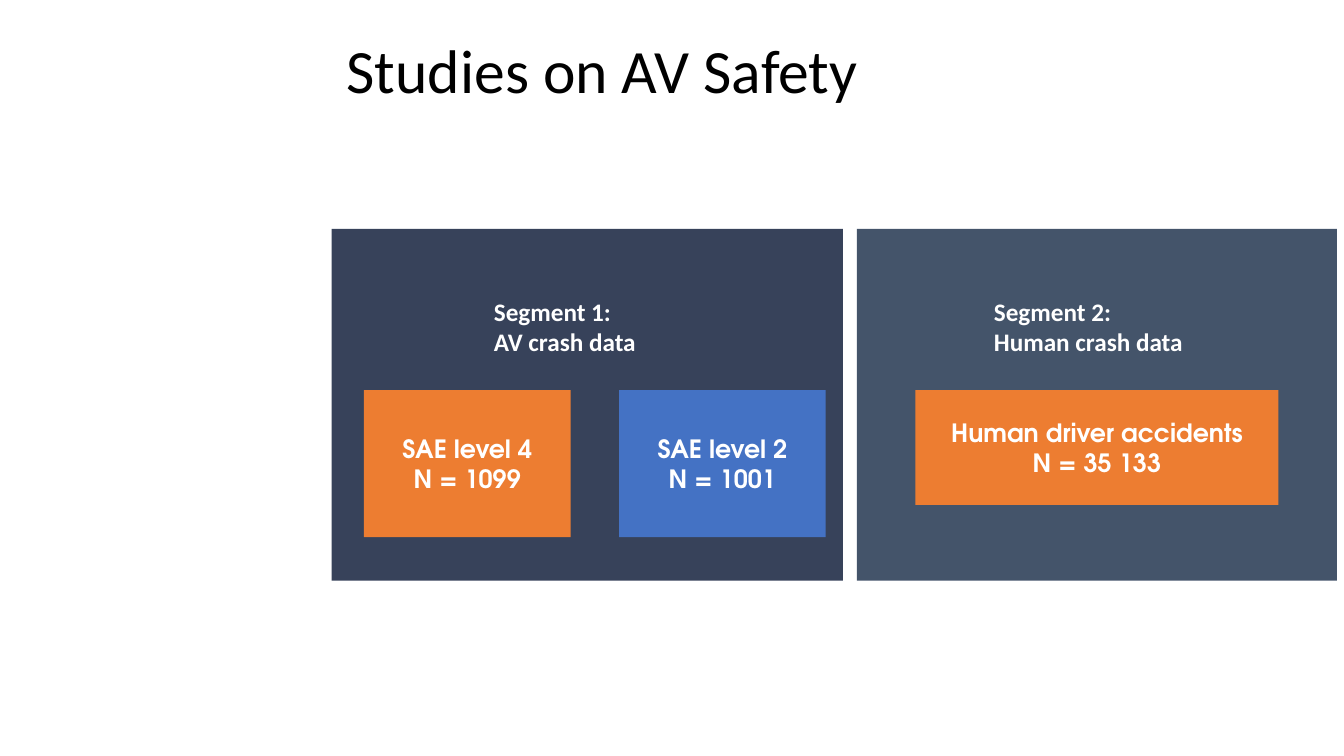
from dataclasses import dataclass

from pptx import Presentation
from pptx.dml.color import RGBColor
from pptx.enum.shapes import MSO_SHAPE
from pptx.enum.text import MSO_ANCHOR, PP_ALIGN
from pptx.util import Inches, Pt


@dataclass(frozen=True)
class Theme:
    navy: str = "37425A"
    slate: str = "44546A"
    orange: str = "ED7D31"
    blue: str = "4472C4"
    white: str = "FFFFFF"
    black: str = "000000"
    body_font: str = "Calibri"
    group_font: str = "TeX Gyre Adventor"
    title_size: int = 44
    body_size: int = 18


THEME = Theme()


def write(frame, text, *, font=THEME.body_font, size=THEME.body_size,
          color=THEME.white, bold=True, align=PP_ALIGN.LEFT,
          anchor=MSO_ANCHOR.TOP, inset_x=0.1, inset_y=0.05, line_spacing=1.0):
    """Fill a text frame with one paragraph per line of text."""
    frame.word_wrap = True
    frame.vertical_anchor = anchor
    frame.margin_left = frame.margin_right = Inches(inset_x)
    frame.margin_top = frame.margin_bottom = Inches(inset_y)
    for index, line in enumerate(text.split("\n")):
        paragraph = frame.add_paragraph() if index else frame.paragraphs[0]
        paragraph.alignment = align
        paragraph.line_spacing = line_spacing
        run = paragraph.add_run()
        run.text = line
        run.font.name = font
        run.font.size = Pt(size)
        run.font.bold = bold
        run.font.color.rgb = RGBColor.from_string(color)


def add_text(slide, box, text, **text_format):
    label = slide.shapes.add_textbox(*map(Inches, box))
    write(label.text_frame, text, **text_format)


def add_block(slide, box, color):
    block = slide.shapes.add_shape(MSO_SHAPE.RECTANGLE, *map(Inches, box))
    block.shadow.inherit = False
    block.fill.solid()
    block.fill.fore_color.rgb = RGBColor.from_string(color)
    block.line.fill.background()
    return block


def add_title(slide, box):
    add_text(slide, box, "Studies on AV Safety", size=THEME.title_size,
             color=THEME.black, bold=False, anchor=MSO_ANCHOR.MIDDLE,
             line_spacing=0.9)


def add_segment(slide, box, color, heading, heading_x, heading_width, groups,
                group_x, group_size, group_pitch=0):
    """Draw a panel with its heading and a row of crash groups (text, colour)."""
    left, top, _, _ = box
    add_block(slide, box, color)
    add_text(slide, (left + heading_x, top + 0.62, heading_width, 0.71), heading)
    for index, (text, group_color) in enumerate(groups):
        group_left = left + group_x + index * group_pitch
        group = add_block(slide, (group_left, top + 1.6, *group_size), group_color)
        write(group.text_frame, text, font=THEME.group_font,
              align=PP_ALIGN.CENTER, anchor=MSO_ANCHOR.MIDDLE,
              inset_x=0.13, inset_y=0.07)


def main():
    presentation = Presentation()
    presentation.slide_width = Inches(13.33)
    presentation.slide_height = Inches(7.5)
    slide = presentation.slides.add_slide(presentation.slide_layouts[6])

    add_segment(slide, (3.29, 2.27, 5.07, 3.49), THEME.navy,
                "Segment 1:\nAV crash data", heading_x=1.51, heading_width=2.05,
                groups=[("SAE level 4\nN = 1099", THEME.orange),
                        ("SAE level 2\nN = 1001", THEME.blue)],
                group_x=0.32, group_size=(2.05, 1.46), group_pitch=2.53)
    add_segment(slide, (8.5, 2.27, 4.76, 3.49), THEME.slate,
                "Segment 2:\nHuman crash data", heading_x=1.26, heading_width=2.46,
                groups=[("Human driver accidents\nN = 35 133", THEME.orange)],
                group_x=0.58, group_size=(3.6, 1.14))
    add_title(slide, (3.34, 0, 8.71, 1.45))

    presentation.save("out.pptx")


if __name__ == "__main__":
    main()
